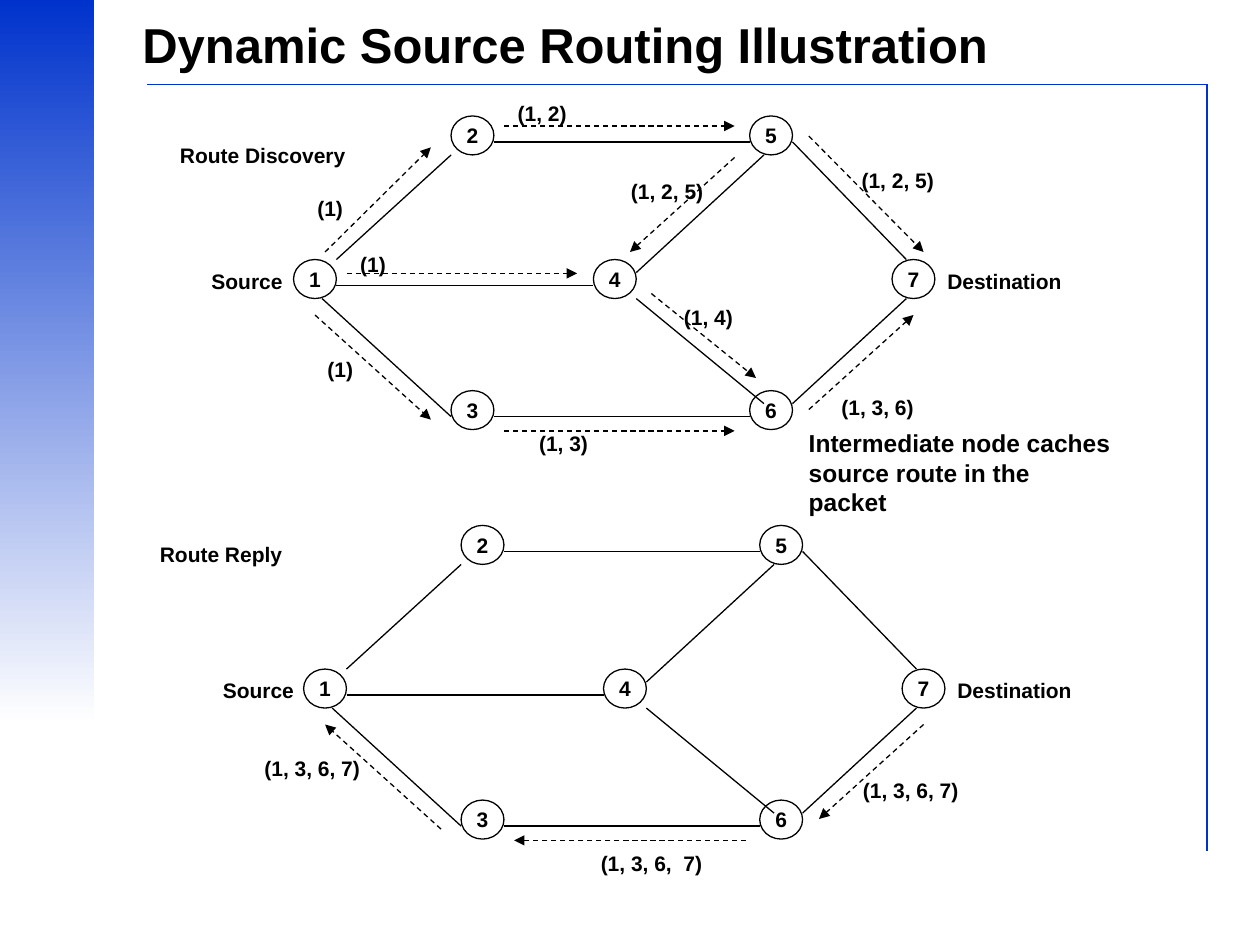
from dataclasses import dataclass

from pptx import Presentation
from pptx.dml.color import RGBColor
from pptx.enum.dml import MSO_LINE_DASH_STYLE as Dash
from pptx.enum.shapes import MSO_CONNECTOR as Connector, MSO_SHAPE as Shape
from pptx.enum.text import MSO_ANCHOR as Anchor, MSO_AUTO_SIZE as Fit, PP_ALIGN as Align
from pptx.oxml.ns import qn
from pptx.util import Emu, Pt
from lxml.etree import SubElement

EMU_PER_PX = 9144
NODE_WIDTH, NODE_HEIGHT = 34, 31


@dataclass(frozen=True)
class Theme:
    font: str = "Arial"
    ink: RGBColor = RGBColor(0, 0, 0)
    paper: RGBColor = RGBColor(255, 255, 255)
    accent: RGBColor = RGBColor(0, 0x33, 0xCC)
    title: int = 28
    note: int = 14
    label: int = 12
    thin: float = 0.75
    rule: float = 1


NODES = {"2": (358, 92), "5": (595, 92), "1": (233, 206), "4": (471, 206),
         "7": (708, 206), "3": (358, 310), "6": (595, 310)}

EDGES_IN_THIRDS = [("1", (3, 0), "2", (0, 3)), ("1", (2, 3), "3", (0, 2)),
                   ("1", (3, 2), "4", (0, 2)), ("2", (3, 2), "5", (0, 2)),
                   ("3", (3, 2), "6", (0, 2)), ("4", (3, 1), "5", (1, 3)),
                   ("5", (3, 2), "7", (1, 0)), ("6", (3, 1), "7", (1, 3)),
                   ("4", (3, 3), "6", (1, 1))]

NETWORK_OFFSETS = [(0, 0), (8, 325)]

REQUESTS = [(258, 200, 342, 117), (275, 217, 458, 217), (250, 250, 342, 333),
            (400, 100, 583, 100), (400, 342, 583, 342), (517, 233, 600, 300),
            (642, 325, 725, 250), (642, 108, 733, 200), (583, 125, 500, 200)]
REPLIES = [(350, 658, 258, 575), (592, 667, 408, 667), (733, 575, 650, 650)]

LABELS = [("Source", 158, 208, 79), ("Source", 167, 533, 79),
          ("Destination", 742, 208, 113), ("Destination", 750, 533, 113),
          ("Route Discovery", 133, 108, 153), ("Route Reply", 117, 425, 119),
          ("(1)", 242, 150, 42), ("(1)", 276, 195, 42), ("(1)", 250, 278, 42),
          ("(1, 2)", 401, 75, 61), ("(1, 3)", 418, 337, 61),
          ("(1, 2, 5)", 674, 128, 80), ("(1, 2, 5)", 491, 137, 80),
          ("(1, 4)", 533, 237, 61), ("(1, 3, 6)", 658, 308, 80),
          ("(1, 3, 6, 7)", 675, 612, 98), ("(1, 3, 6,  7)", 467, 670, 103),
          ("(1, 3, 6, 7)", 200, 595, 98)]


def px(*lengths):
    return [Emu(round(length * EMU_PER_PX)) for length in lengths]


def write(frame, *lines, theme, size, align=Align.LEFT, anchor=Anchor.TOP,
          wrap=False, inset=None, spacing=None, fit=Fit.NONE):
    frame.word_wrap = wrap
    frame.auto_size = fit
    frame.vertical_anchor = anchor
    if inset is not None:
        frame.margin_left = frame.margin_right = inset
        frame.margin_top = frame.margin_bottom = inset
    for index, line in enumerate(lines):
        para = frame.add_paragraph() if index else frame.paragraphs[0]
        para.alignment = align
        if spacing:
            para.line_spacing = spacing
        span = para.add_run()
        span.text = line
        span.font.name, span.font.size, span.font.bold = theme.font, Pt(size), True
        span.font.color.rgb = theme.ink


class Page:
    """Draws styled elements on one slide."""

    def __init__(self, deck, theme):
        self.theme = theme
        self.slide = deck.slides.add_slide(deck.slide_layouts[5])
        self.shapes = self.slide.shapes

    def title(self, words, *place):
        box = self.shapes.title
        box.left, box.top, box.width, box.height = px(*place)
        write(box.text_frame, words, theme=self.theme, size=self.theme.title,
              wrap=True, inset=0, spacing=0.9)

    def band(self, *place):
        band = self.shapes.add_shape(Shape.RECTANGLE, *px(*place))
        band.shadow.inherit = False
        band.line.fill.background()
        band.fill.gradient()
        band.fill.gradient_angle = 270
        for stop, color in zip(band.fill.gradient_stops, (self.theme.accent, self.theme.paper)):
            stop.color.rgb = color

    def line(self, *ends, color=None, width=None, shapes=None):
        line = (shapes or self.shapes).add_connector(Connector.STRAIGHT, *px(*ends))
        line.line.color.rgb = color or self.theme.ink
        line.line.width = Pt(width or self.theme.thin)
        SubElement(line._element.spPr, qn("a:effectLst"))
        return line

    def rule(self, *ends):
        self.line(*ends, color=self.theme.accent, width=self.theme.rule)

    def arrow(self, *ends):
        arrow = self.line(*ends)
        arrow.line.dash_style = Dash.DASH
        SubElement(arrow.line._get_or_add_ln(), qn("a:tailEnd"), type="triangle")

    def node(self, name, left, top, shapes):
        node = shapes.add_shape(Shape.OVAL, *px(left, top, NODE_WIDTH, NODE_HEIGHT))
        node.shadow.inherit = False
        node.fill.background()
        node.line.color.rgb = self.theme.ink
        node.line.width = Pt(self.theme.thin)
        write(node.text_frame, name, theme=self.theme, size=self.theme.label,
              align=Align.CENTER, anchor=Anchor.MIDDLE, inset=0)

    def network(self, shift_x, shift_y):
        shapes = self.shapes.add_group_shape().shapes
        places = {name: (x + shift_x, y + shift_y) for name, (x, y) in NODES.items()}
        for name, place in places.items():
            self.node(name, *place, shapes)

        def port(name, thirds):
            left, top = places[name]
            return left + NODE_WIDTH * thirds[0] / 3, top + NODE_HEIGHT * thirds[1] / 3

        for start, start_port, end, end_port in EDGES_IN_THIRDS:
            self.line(*port(start, start_port), *port(end, end_port), shapes=shapes)

    def text(self, *lines, place, size=None, wrap=False):
        box = self.shapes.add_textbox(*px(*place))
        write(box.text_frame, *lines, theme=self.theme, size=size or self.theme.label,
              wrap=wrap, fit=Fit.SHAPE_TO_FIT_TEXT)


def main():
    deck = Presentation()
    deck.slide_width, deck.slide_height = px(1000, 750)
    theme = Theme()
    page = Page(deck, theme)
    page.band(0, 0, 75, 575)
    page.rule(117, 67, 958, 67)
    page.rule(958, 67, 958, 675)
    page.title("Dynamic Source Routing Illustration", 113, 17, 811, 83)
    for offset in NETWORK_OFFSETS:
        page.network(*offset)
    for ends in REQUESTS + REPLIES:
        page.arrow(*ends)
    for words, left, top, width in LABELS:
        page.text(words, place=(left, top, width, 30))
    page.text("Intermediate node caches", "source route in the packet",
              place=(632, 335, 261, 57), size=theme.note, wrap=True)
    deck.save("out.pptx")


if __name__ == "__main__":
    main()
